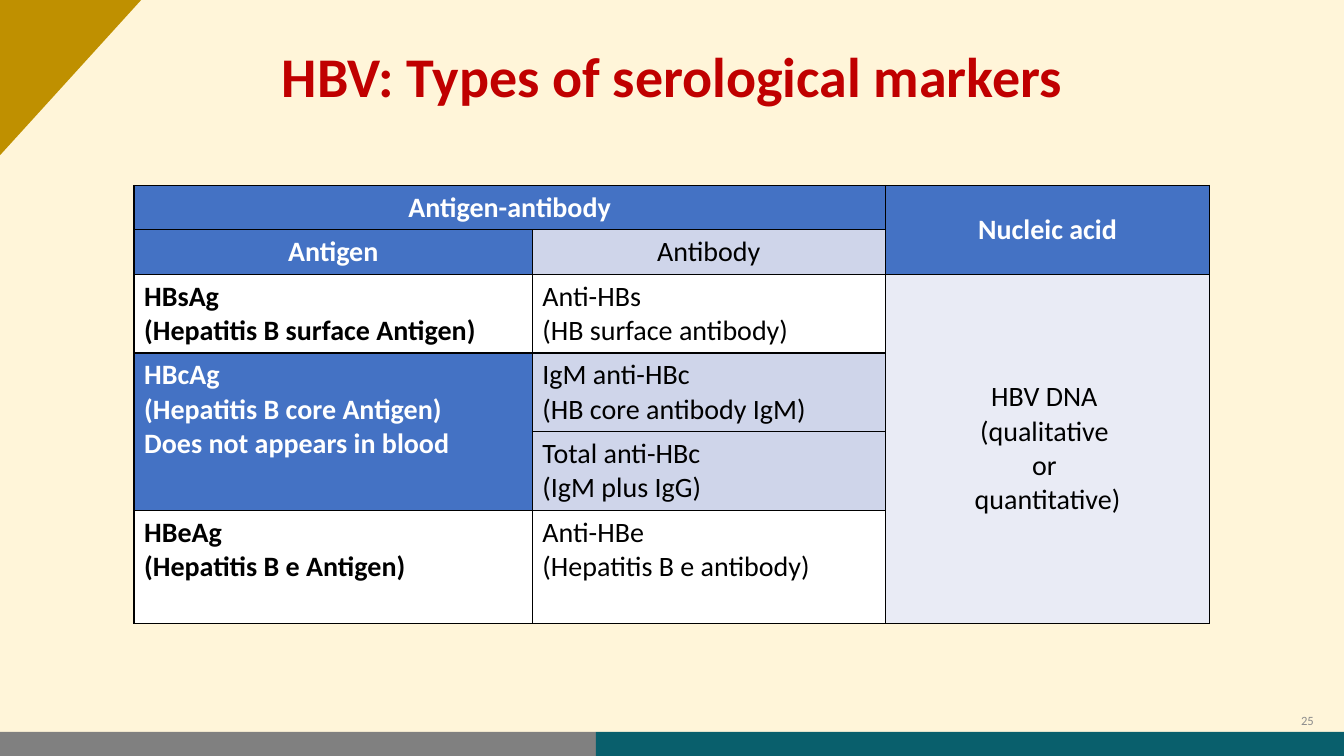
from lxml import etree
from pptx import Presentation
from pptx.dml.color import RGBColor
from pptx.enum.shapes import MSO_SHAPE
from pptx.enum.text import MSO_ANCHOR, MSO_AUTO_SIZE, PP_ALIGN
from pptx.oxml.ns import qn
from pptx.util import Inches, Pt

RECT, TRIANGLE = MSO_SHAPE.RECTANGLE, MSO_SHAPE.ISOSCELES_TRIANGLE
LEFT, CENTER, RIGHT = PP_ALIGN.LEFT, PP_ALIGN.CENTER, PP_ALIGN.RIGHT
TOP, MIDDLE = MSO_ANCHOR.TOP, MSO_ANCHOR.MIDDLE
NO_AUTOFIT = MSO_AUTO_SIZE.NONE

CREAM = RGBColor(0xFF, 0xF5, 0xD9)
GOLD = RGBColor(0xBF, 0x90, 0x00)
GRAY = RGBColor(0x80, 0x80, 0x80)
TEAL = RGBColor(0x09, 0x5F, 0x6C)
RED = RGBColor(0xC0, 0x00, 0x00)
BLUE = RGBColor(0x44, 0x72, 0xC4)
LIGHT_BLUE = RGBColor(0xCF, 0xD5, 0xEA)
PALE_BLUE = RGBColor(0xE9, 0xEB, 0xF5)
WHITE = RGBColor(0xFF, 0xFF, 0xFF)
BLACK = RGBColor(0x00, 0x00, 0x00)
NUMBER_GRAY = RGBColor(0x8C, 0x8C, 0x8C)

COL_WIDTHS = [3.95, 3.5, 3.22]
ROW_HEIGHTS = [0.44, 0.44, 0.78, 0.78, 0.78, 1.12]

HEAD = {"fill": BLUE, "color": WHITE, "bold": True, "align": CENTER}
SUBHEAD = {"fill": LIGHT_BLUE, "align": CENTER}
ANTIGEN = {"fill": WHITE, "bold": True}
CORE = {"fill": BLUE, "color": WHITE, "bold": True}
ANTIBODY = {"fill": WHITE}
CORE_ANTIBODY = {"fill": LIGHT_BLUE}
DNA = {"fill": PALE_BLUE, "align": CENTER, "anchor": MIDDLE}

CELLS = [
    (0, 0, 1, 2, ["Antigen-antibody"], HEAD),
    (0, 2, 2, 1, ["Nucleic acid"], HEAD | {"anchor": MIDDLE}),
    (1, 0, 1, 1, ["Antigen"], HEAD),
    (1, 1, 1, 1, ["Antibody"], SUBHEAD),
    (2, 0, 1, 1, ["HBsAg", "(Hepatitis B surface Antigen)"], ANTIGEN),
    (2, 1, 1, 1, ["Anti-HBs", "(HB surface antibody)"], ANTIBODY),
    (2, 2, 4, 1, ["HBV DNA \n(qualitative \nor \nquantitative)"], DNA),
    (3, 0, 2, 1, ["HBcAg", "(Hepatitis B core Antigen)",
                  "Does not appears in blood"], CORE),
    (3, 1, 1, 1, ["IgM anti-HBc", "(HB core antibody IgM)"], CORE_ANTIBODY),
    (4, 1, 1, 1, ["Total anti-HBc", "(IgM plus IgG)"], CORE_ANTIBODY),
    (5, 0, 1, 1, ["HBeAg", "(Hepatitis B e Antigen)"], ANTIGEN),
    (5, 1, 1, 1, ["Anti-HBe", "(Hepatitis B e antibody)"], ANTIBODY),
]


def write(tf, lines, size, color=BLACK, bold=False, align=LEFT, anchor=TOP):
    tf.word_wrap = True
    for i, line in enumerate(lines):
        p = tf.add_paragraph() if i else tf.paragraphs[0]
        p.text = line
        p.alignment = align
        for r in p.runs:
            font = {"name": "Calibri", "size": Pt(size), "bold": bold}
            for name, value in font.items():
                setattr(r.font, name, value)
            r.font.color.rgb = color
    return anchor


def add_block(s, kind, x, y, w, h, color):
    sp = s.shapes.add_shape(kind, Inches(x), Inches(y), Inches(w), Inches(h))
    sp.shadow.inherit = False
    sp.fill.solid()
    sp.fill.fore_color.rgb = color
    sp.line.fill.background()
    return sp


def add_title(s, text):
    sp = s.shapes.title
    box = {"left": 2.2, "top": 0.4, "width": 8.93, "height": 0.78}
    for name, value in box.items():
        setattr(sp, name, Inches(value))
    tf = sp.text_frame
    tf.auto_size = NO_AUTOFIT
    tf.vertical_anchor = write(tf, [text], 40, RED, True, CENTER, MIDDLE)
    tf.paragraphs[0].line_spacing = 0.9


def add_number(s, text):
    sp = s.shapes.add_textbox(Inches(12.67), Inches(6.95), Inches(0.46), Inches(0.4))
    tf = sp.text_frame
    tf.vertical_anchor = write(tf, [text], 9, NUMBER_GRAY, False, RIGHT, MIDDLE)


def set_borders(cell):
    tcPr = cell._tc.get_or_add_tcPr()
    for i, side in enumerate(("lnL", "lnR", "lnT", "lnB")):
        ln = etree.Element(qn(f"a:{side}"), w=str(Pt(1)))
        fill = etree.SubElement(ln, qn("a:solidFill"))
        etree.SubElement(fill, qn("a:srgbClr"), val=str(BLACK))
        tcPr.insert(i, ln)


def fill_cell(cell, lines, fill, **text_format):
    cell.fill.solid()
    cell.fill.fore_color.rgb = fill
    cell.vertical_anchor = write(cell.text_frame, lines, 20, **text_format)


def add_marker_table(s):
    frame = s.shapes.add_table(
        len(ROW_HEIGHTS), len(COL_WIDTHS), Inches(1.33), Inches(1.84),
        Inches(sum(COL_WIDTHS)), Inches(sum(ROW_HEIGHTS)))
    table = frame.table
    table.horz_banding = False
    for col, width in zip(table.columns, COL_WIDTHS):
        col.width = Inches(width)
    for row, height in zip(table.rows, ROW_HEIGHTS):
        row.height = Inches(height)
    for row, col, rows, cols, lines, style in CELLS:
        cell = table.cell(row, col)
        if rows * cols > 1:
            cell.merge(table.cell(row + rows - 1, col + cols - 1))
        fill_cell(cell, lines, **style)
    for cell in table.iter_cells():
        set_borders(cell)


def main():
    prs = Presentation()
    prs.slide_width, prs.slide_height = Inches(13.33), Inches(7.5)
    s = prs.slides.add_slide(prs.slide_layouts[5])
    s.background.fill.solid()
    s.background.fill.fore_color.rgb = CREAM
    corner = add_block(s, TRIANGLE, 0, 0, 1.4, 1.54, GOLD)
    corner.adjustments[0] = 1
    corner.rotation = 180
    add_block(s, RECT, 0, 7.26, 5.91, 0.24, GRAY)
    add_block(s, RECT, 5.91, 7.26, 7.42, 0.24, TEAL)
    add_title(s, "HBV: Types of serological markers")
    add_marker_table(s)
    add_number(s, "25")
    prs.save("out.pptx")


if __name__ == "__main__":
    main()
